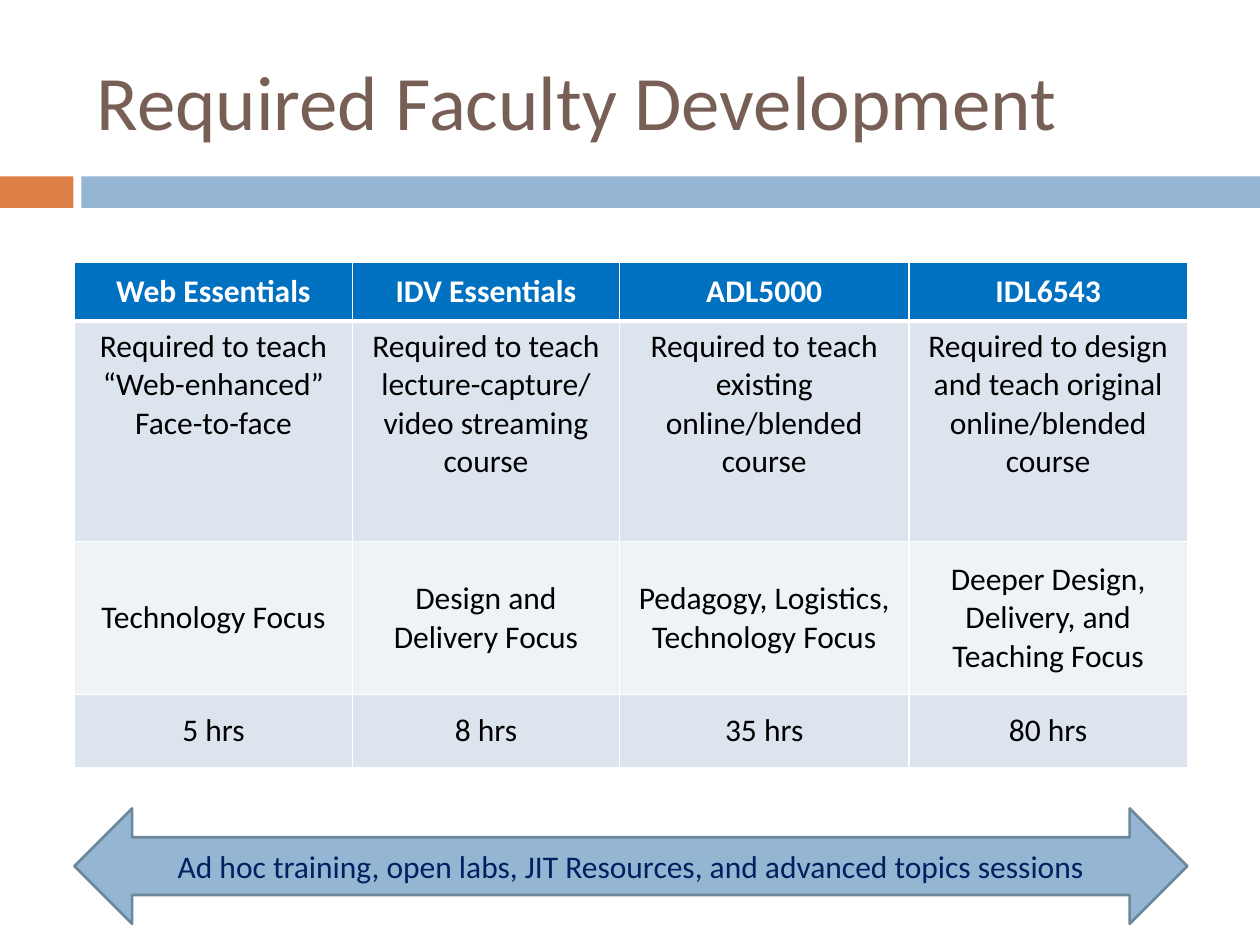
from lxml import etree
from pptx import Presentation
from pptx.dml.color import RGBColor
from pptx.enum.shapes import MSO_SHAPE as SHAPE
from pptx.enum.text import MSO_ANCHOR as ANCHOR, PP_ALIGN as ALIGN
from pptx.oxml import parse_xml
from pptx.oxml.ns import nsdecls
from pptx.util import Pt

BROWN = RGBColor(0x77, 0x5F, 0x55)
ORANGE = RGBColor(0xDD, 0x80, 0x47)
LIGHT_BLUE = RGBColor(0x94, 0xB6, 0xD2)
OUTLINE = RGBColor(0x6D, 0x87, 0x9B)
HEADER = RGBColor(0x00, 0x70, 0xC0)
BAND_DARK = RGBColor(0xDC, 0xE5, 0xEE)
BAND_LIGHT = RGBColor(0xEE, 0xF3, 0xF7)
NAVY = RGBColor(0x00, 0x20, 0x60)
WHITE = RGBColor(0xFF, 0xFF, 0xFF)
BLACK = RGBColor(0, 0, 0)


def add_run(p, text, size, color, bold=False):
    r = p.add_run()
    r.text = text
    r.font.name = "Calibri"
    r.font.size = Pt(size)
    r.font.bold = bold
    r.font.color.rgb = color


def add_filled(kind, x, y, w, h, color):
    sp = s.shapes.add_shape(kind, Pt(x), Pt(y), Pt(w), Pt(h))
    sp.shadow.inherit = False
    sp.fill.solid()
    sp.fill.fore_color.rgb = color
    sp.line.fill.background()
    return sp


prs = Presentation()
prs.slide_width, prs.slide_height = Pt(720), Pt(540)
s = prs.slides.add_slide(prs.slide_layouts[5])

# Bar under the title
add_filled(SHAPE.RECTANGLE, 0, 100.8, 42, 18, ORANGE)
add_filled(SHAPE.RECTANGLE, 46.5, 100.8, 673.5, 18, LIGHT_BLUE)

# Title
title = s.shapes.title
title.left, title.top, title.width, title.height = Pt(48), Pt(18), Pt(642), Pt(78)
tf = title.text_frame
tf.vertical_anchor = ANCHOR.MIDDLE
tf.paragraphs[0].alignment = ALIGN.LEFT
add_run(tf.paragraphs[0], "Required Faculty Development", 44, BROWN)

# Course table
rows = [
    ["Web Essentials", "IDV Essentials", "ADL5000", "IDL6543"],
    ["Required to teach “Web-enhanced” Face-to-face",
     "Required to teach lecture-capture/ video streaming course",
     "Required to teach\nexisting online/blended course",
     "Required to design and teach original online/blended course"],
    ["Technology Focus", "Design and Delivery Focus",
     "Pedagogy, Logistics, Technology Focus",
     "Deeper Design, Delivery, and Teaching Focus"],
    ["5 hrs", "8 hrs", "35 hrs", "80 hrs"],
]
col_widths = [159, 152.5, 165.5, 159]
row_heights = [33.5, 126, 87.5, 41.5]
row_fills = [HEADER, BAND_DARK, BAND_LIGHT, BAND_DARK]

table = s.shapes.add_table(4, 4, Pt(42.5), Pt(150), Pt(sum(col_widths)),
                           Pt(sum(row_heights))).table
for col, width in zip(table.columns, col_widths):
    col.width = Pt(width)
for i, texts in enumerate(rows):
    table.rows[i].height = Pt(row_heights[i])
    for j, text in enumerate(texts):
        cell = table.cell(i, j)
        cell.vertical_anchor = ANCHOR.TOP if i == 1 else ANCHOR.MIDDLE
        cell.fill.solid()
        cell.fill.fore_color.rgb = row_fills[i]
        tf = cell.text_frame
        for n, line in enumerate(text.split("\n")):
            p = tf.add_paragraph() if n else tf.paragraphs[0]
            p.alignment = ALIGN.CENTER
            add_run(p, line, 18, BLACK if i else WHITE, bold=i == 0)
        # White borders, heavier below the header
        tcPr = cell._tc.get_or_add_tcPr()
        for n, side in enumerate("LRTB"):
            width = Pt(3 if i == 0 and side == "B" else 1)
            ln = parse_xml(f'<a:ln{side} {nsdecls("a")} w="{width}"/>')
            fill = etree.SubElement(ln, ln.tag.replace(f"ln{side}", "solidFill"))
            etree.SubElement(fill, ln.tag.replace(f"ln{side}", "srgbClr"), val=str(WHITE))
            tcPr.insert(n, ln)

# Arrow for ongoing support
arrow = add_filled(SHAPE.LEFT_RIGHT_ARROW, 42.5, 462, 636, 66, LIGHT_BLUE)
arrow.line.color.rgb = OUTLINE
arrow.line.width = Pt(1.5)
tf = arrow.text_frame
tf.word_wrap = True
tf.vertical_anchor = ANCHOR.MIDDLE
p = tf.paragraphs[0]
p.alignment = ALIGN.CENTER
add_run(p, "Ad hoc training, open labs, JIT Resources, and advanced topics sessions",
        18, NAVY)

prs.save("out.pptx")
